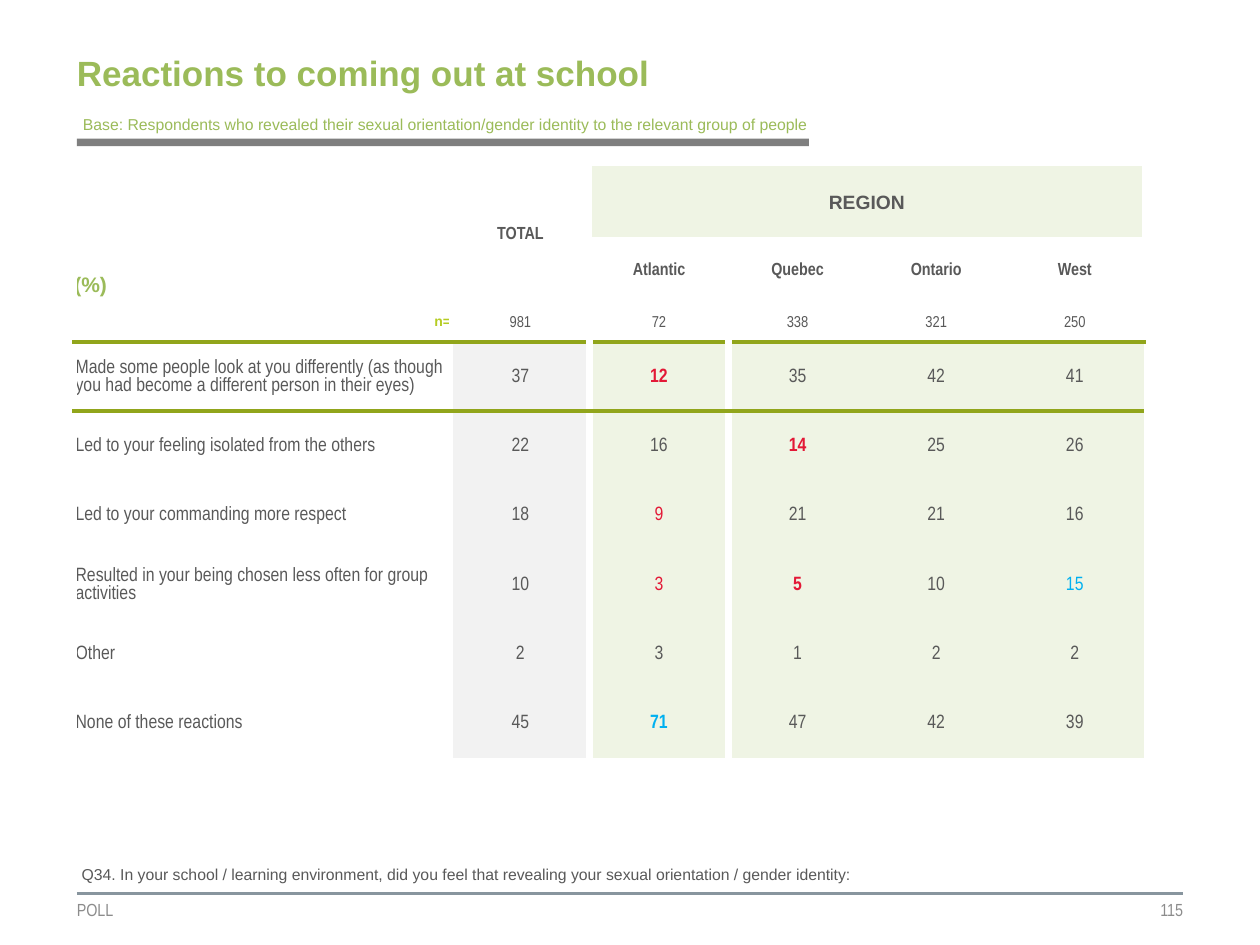
"""Build the survey slide on reactions to coming out at school, by region."""
from lxml.etree import SubElement
from pptx import Presentation
from pptx.dml.color import RGBColor
from pptx.enum.shapes import MSO_CONNECTOR, MSO_SHAPE
from pptx.enum.text import MSO_ANCHOR, PP_ALIGN
from pptx.oxml.ns import qn
from pptx.util import Inches, Pt

GREEN = RGBColor(0x9B, 0xBB, 0x59)
OLIVE = RGBColor(0x91, 0xA5, 0x1B)
LIME = RGBColor(0xB5, 0xCC, 0x22)
PALE_GREEN = RGBColor(0xEF, 0xF4, 0xE4)
PALE_GRAY = RGBColor(0xF2, 0xF2, 0xF2)
TEXT_GRAY = RGBColor(0x59, 0x59, 0x59)
FOOTER_GRAY = RGBColor(0x8C, 0x8C, 0x8C)
BAR_GRAY = RGBColor(0x7F, 0x7F, 0x7F)
RULE_GRAY = RGBColor(0x88, 0x95, 0x9E)
RED = RGBColor(0xE3, 0x18, 0x36)
BLUE = RGBColor(0x00, 0xB0, 0xF0)
WHITE = RGBColor(0xFF, 0xFF, 0xFF)
NO_STYLE = "{2D5ABB26-0587-4C30-8999-92F81FD0307C}"

REGIONS = ["Atlantic", "Quebec", "Ontario", "West"]
SAMPLE_SIZES = [981, 72, 338, 321, 250]
REACTIONS = [
    ("Made some people look at you differently (as though you had become "
     "a different person in their eyes)", [37, 12, 35, 42, 41]),
    ("Led to your feeling isolated from the others", [22, 16, 14, 25, 26]),
    ("Led to your commanding more respect", [18, 9, 21, 21, 16]),
    ("Resulted in your being chosen less often for group activities", [10, 3, 5, 10, 15]),
    ("Other", [2, 3, 1, 2, 2]),
    ("None of these reactions", [45, 71, 47, 42, 39]),
]
HIGHLIGHTS = {
    (0, 1): (RED, True), (1, 2): (RED, True), (2, 1): (RED, False),
    (3, 1): (RED, False), (3, 2): (RED, True), (3, 4): (BLUE, False),
    (5, 1): (BLUE, True),
}
HEADER_ROWS = 4


def write(frame, text, size, font="Arial", color=TEXT_GRAY, bold=False, align=PP_ALIGN.LEFT):
    paragraph = frame.paragraphs[0]
    paragraph.alignment = align
    run = paragraph.add_run()
    run.text = str(text)
    run.font.size = Pt(size)
    run.font.name = font
    run.font.bold = bold
    run.font.color.rgb = color
    return paragraph


def add_border(cell, side, color, points):
    properties = cell._tc.get_or_add_tcPr()
    line = SubElement(properties, qn(f"a:ln{side}"), w=str(Pt(points)))
    fill = SubElement(line, qn("a:solidFill"))
    SubElement(fill, qn("a:srgbClr"), val=str(color))


presentation = Presentation()
presentation.slide_width, presentation.slide_height = Inches(10), Inches(7.5)
column = presentation.slide_width // 100
row = presentation.slide_height // 75
slide = presentation.slides.add_slide(presentation.slide_layouts[5])

rule = slide.shapes.add_connector(
    MSO_CONNECTOR.STRAIGHT, int(6.1 * column), int(70.9 * row), int(93.9 * column), int(70.9 * row))
rule.line.color.rgb = RULE_GRAY
rule.line.width = Pt(1.5)
SubElement(rule._element.spPr, qn("a:effectLst"))

bar = slide.shapes.add_shape(
    MSO_SHAPE.RECTANGLE, int(6.1 * column), int(11 * row), int(58.1 * column), int(0.6 * row))
bar.shadow.inherit = False
bar.fill.solid()
bar.fill.fore_color.rgb = BAR_GRAY
bar.line.fill.background()

title = slide.shapes.title
title.left, title.top = int(6.1 * column), int(3.6 * row)
title.width, title.height = 62 * column, int(6.9 * row)
frame = title.text_frame
frame.vertical_anchor = MSO_ANCHOR.TOP
frame.margin_left = frame.margin_right = frame.margin_bottom = 0
frame.margin_top = row // 2
write(frame, "Reactions to coming out at school", 20, color=GREEN, bold=True)

for text, left, align in [("POLL", 6.1, PP_ALIGN.LEFT), ("115", 65.9, PP_ALIGN.RIGHT)]:
    footer = slide.shapes.add_textbox(
        int(left * column), int(70.9 * row), 28 * column, int(2.6 * row))
    frame = footer.text_frame
    frame.word_wrap = True
    frame.vertical_anchor = MSO_ANCHOR.MIDDLE
    frame.margin_left = frame.margin_right = frame.margin_top = frame.margin_bottom = 0
    write(frame, text, 10, "Arial Narrow", FOOTER_GRAY, align=align)

for text, left, top, width, color, wrap in [
    ("Base: Respondents who revealed their sexual orientation/gender identity "
     "to the relevant group of people", 5.6, 8.6, 60.4, GREEN, False),
    ("Q34. In your school / learning environment, did you feel that revealing "
     "your sexual orientation / gender identity:", 5.5, 68.1, 85.5, TEXT_GRAY, True),
]:
    note = slide.shapes.add_textbox(
        int(left * column), int(top * row), int(width * column), int(2.5 * row))
    note.text_frame.word_wrap = wrap
    write(note.text_frame, text, 9, color=color)

row_heights = [3.7, 1.6, 5.2, 3.1] + [5.5] * len(REACTIONS)
column_widths = [29.9] + [11] * len(SAMPLE_SIZES)
table_shape = slide.shapes.add_table(
    len(row_heights), len(column_widths), int(5.9 * column), int(13.2 * row),
    int(sum(column_widths) * column), int(sum(row_heights) * row))
table = table_shape.table
table.first_row = table.horz_banding = False
table._tbl.tblPr.find(qn("a:tableStyleId")).text = NO_STYLE
for index, height in enumerate(row_heights):
    table.rows[index].height = int(height * row)
for index, width in enumerate(column_widths):
    table.columns[index].width = int(width * column)

for row_index in range(len(row_heights)):
    for column_index in range(len(column_widths)):
        cell = table.cell(row_index, column_index)
        cell.vertical_anchor = MSO_ANCHOR.MIDDLE
        cell.margin_left = cell.margin_right = cell.margin_top = column // 10
        cell.margin_bottom = 0
        body = row_index >= HEADER_ROWS
        if column_index < 2 or not body or column_index == 2:
            add_border(cell, "L", WHITE, 4.5 if body and column_index == 2 else 3)
        if column_index < 2 or not body:
            add_border(cell, "R", WHITE, 4.5 if body and column_index == 1 else 3)
        if row_index == HEADER_ROWS:
            add_border(cell, "T", OLIVE, 3)
        if row_index == HEADER_ROWS - 1:
            add_border(cell, "B", OLIVE, 3)
        if column_index > 1 and (body or row_index < 2):
            cell.fill.solid()
            cell.fill.fore_color.rgb = PALE_GREEN
        elif column_index == 1 and body:
            cell.fill.solid()
            cell.fill.fore_color.rgb = PALE_GRAY
        else:
            cell.fill.background()

table.cell(0, 1).merge(table.cell(2, 1))
table.cell(0, 2).merge(table.cell(1, 5))
table.cell(1, 0).merge(table.cell(2, 0))

write(table.cell(0, 1).text_frame, "TOTAL", 10, "Arial Narrow", bold=True, align=PP_ALIGN.CENTER)
write(table.cell(0, 2).text_frame, "REGION", 11, bold=True, align=PP_ALIGN.CENTER)
for row_index, text, size, color, align, anchor in [
    (1, "(%)", 12, GREEN, PP_ALIGN.LEFT, MSO_ANCHOR.BOTTOM),
    (3, "n=", 8, LIME, PP_ALIGN.RIGHT, MSO_ANCHOR.MIDDLE),
]:
    cell = table.cell(row_index, 0)
    cell.margin_left = cell.margin_right = 0
    cell.margin_top = cell.margin_bottom = row // 2
    cell.vertical_anchor = anchor
    paragraph = write(cell.text_frame, text, size, color=color, bold=True, align=align)
    paragraph.line_spacing = 0.95

for index, region in enumerate(REGIONS, 2):
    write(table.cell(2, index).text_frame, region, 10, "Arial Narrow",
          bold=True, align=PP_ALIGN.CENTER)
for index, sample_size in enumerate(SAMPLE_SIZES, 1):
    write(table.cell(3, index).text_frame, sample_size, 9, "Arial Narrow", align=PP_ALIGN.CENTER)
for reaction_index, (reaction, values) in enumerate(REACTIONS):
    row_index = HEADER_ROWS + reaction_index
    write(table.cell(row_index, 0).text_frame, reaction, 11, "Arial Narrow")
    for value_index, value in enumerate(values):
        color, bold = HIGHLIGHTS.get((reaction_index, value_index), (TEXT_GRAY, False))
        write(table.cell(row_index, value_index + 1).text_frame, value, 11, "Arial Narrow",
              color, bold, PP_ALIGN.CENTER)

presentation.save("out.pptx")
